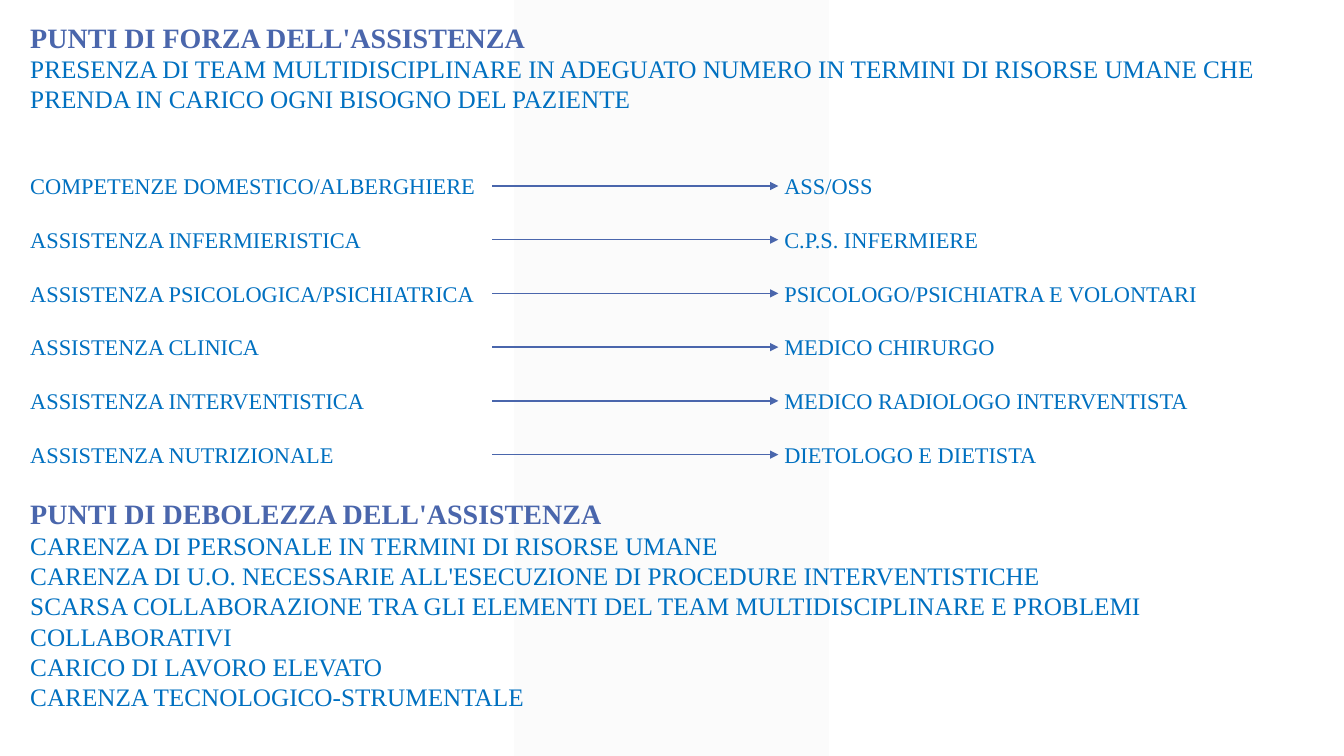
import dataclasses

import lxml.etree
import pptx
import pptx.dml.color
import pptx.enum.shapes
import pptx.enum.text
import pptx.oxml
import pptx.oxml.ns
import pptx.util

SLIDE_WIDTH = 13.33
SLIDE_HEIGHT = 7.5
CELL = 0.1  # side of a grid cell in inches; places below count cells
LEFT_MARGIN = 3
TEXT_WIDTH = 127.9
ARROW_START = 48.8
ARROW_END = 77.2
FIRST_ROW = 17.1
ROW_PITCH = 5.33
ROW_HEIGHT = 2.7
FONT = "Times New Roman"
INDIGO = "4A66AC"
BLUE = "0070C0"


@dataclasses.dataclass
class Area:
    column: float
    row: float
    columns: float
    rows: float


@dataclasses.dataclass
class CareRole:
    need: str
    professional: str


HEADING = "PUNTI DI FORZA DELL'ASSISTENZA"
STRENGTH = (
    "PRESENZA DI TEAM MULTIDISCIPLINARE IN ADEGUATO NUMERO IN TERMINI DI "
    "RISORSE UMANE CHE PRENDA IN CARICO OGNI BISOGNO DEL PAZIENTE"
)
CARE_ROLES = [
    CareRole("COMPETENZE DOMESTICO/ALBERGHIERE", "ASS/OSS"),
    CareRole("ASSISTENZA INFERMIERISTICA", "C.P.S. INFERMIERE"),
    CareRole("ASSISTENZA PSICOLOGICA/PSICHIATRICA", "PSICOLOGO/PSICHIATRA E VOLONTARI"),
    CareRole("ASSISTENZA CLINICA", "MEDICO CHIRURGO"),
    CareRole("ASSISTENZA INTERVENTISTICA", "MEDICO RADIOLOGO INTERVENTISTA"),
    CareRole("ASSISTENZA NUTRIZIONALE", "DIETOLOGO E DIETISTA"),
]
WEAKNESS_HEADING = "PUNTI DI DEBOLEZZA DELL'ASSISTENZA"
WEAKNESSES = [
    "CARENZA DI PERSONALE IN TERMINI DI RISORSE UMANE",
    "CARENZA DI U.O. NECESSARIE ALL'ESECUZIONE DI PROCEDURE INTERVENTISTICHE",
    "SCARSA COLLABORAZIONE TRA GLI ELEMENTI DEL TEAM MULTIDISCIPLINARE E PROBLEMI COLLABORATIVI",
    "CARICO DI LAVORO ELEVATO",
    "CARENZA TECNOLOGICO-STRUMENTALE",
]


def cells(count: float) -> int:
    return pptx.util.Inches(count * CELL)


def color(value: str) -> pptx.dml.color.RGBColor:
    return pptx.dml.color.RGBColor.from_string(value)


def write(box, lines: list[str], size: float = 18, fill: str = BLUE,
          bold: bool = False, inset: float = 0) -> None:
    """Fill a box with one left-aligned paragraph per line."""
    frame = box.text_frame
    frame.word_wrap = True
    frame.auto_size = pptx.enum.text.MSO_AUTO_SIZE.NONE
    frame.vertical_anchor = pptx.enum.text.MSO_ANCHOR.TOP
    frame.margin_left = cells(inset)
    frame.margin_right = frame.margin_top = frame.margin_bottom = 0
    for index, line in enumerate(lines):
        para = frame.paragraphs[0] if index == 0 else frame.add_paragraph()
        para.alignment = pptx.enum.text.PP_ALIGN.LEFT
        para.line_spacing = pptx.util.Pt(1.2 * size)
        para.space_before = para.space_after = pptx.util.Pt(0)
        span = para.add_run()
        span.text = line
        span.font.name = FONT
        span.font.size = pptx.util.Pt(size)
        span.font.bold = bold
        span.font.color.rgb = color(fill)


def add_text(page, area: Area, lines: list[str], **text_format):
    box = page.shapes.add_textbox(
        cells(area.column), cells(area.row), cells(area.columns), cells(area.rows))
    write(box, lines, **text_format)
    return box


def add_heading(page, area: Area, text: str) -> None:
    title = page.shapes.title
    title.left, title.top = cells(area.column), cells(area.row)
    title.width, title.height = cells(area.columns), cells(area.rows)
    write(title, [text], size=20, fill=INDIGO, bold=True)


def add_band(page) -> None:
    """Draw the pale vertical band behind everything else."""
    band = page.shapes.add_shape(
        pptx.enum.shapes.MSO_SHAPE.RECTANGLE,
        cells(51), 0, cells(31.2), pptx.util.Inches(SLIDE_HEIGHT))
    band.shadow.inherit = False
    band.fill.solid()
    band.fill.fore_color.rgb = color("F2F2F2")
    band.line.fill.background()
    tone = band.element.spPr.find(".//" + pptx.oxml.ns.qn("a:srgbClr"))
    lxml.etree.SubElement(tone, pptx.oxml.ns.qn("a:alpha"), val="30000")
    page.shapes.title.element.addprevious(band.element)


def add_arrow(page, start, end) -> None:
    arrow = page.shapes.add_connector(
        pptx.enum.shapes.MSO_CONNECTOR.STRAIGHT, 0, 0, 0, 0)
    arrow.begin_connect(start, 3)
    arrow.end_connect(end, 1)
    arrow.line.color.rgb = color(INDIGO)
    arrow.line.width = pptx.util.Pt(1)
    outline = arrow.line._get_or_add_ln()
    lxml.etree.SubElement(outline, pptx.oxml.ns.qn("a:tailEnd"), type="triangle")
    lxml.etree.SubElement(arrow.element.spPr, pptx.oxml.ns.qn("a:effectLst"))


def add_care_role(page, role: CareRole, row: float) -> None:
    need = add_text(
        page, Area(LEFT_MARGIN, row, ARROW_START - LEFT_MARGIN, ROW_HEIGHT),
        [role.need], size=16)
    professional = add_text(
        page, Area(ARROW_END, row, 50, ROW_HEIGHT),
        [role.professional], size=16, inset=0.6)
    add_arrow(page, need, professional)


def main() -> None:
    deck = pptx.Presentation()
    deck.slide_width = pptx.util.Inches(SLIDE_WIDTH)
    deck.slide_height = pptx.util.Inches(SLIDE_HEIGHT)
    page = deck.slides.add_slide(deck.slide_layouts.get_by_name("Title Only"))
    add_band(page)
    add_heading(page, Area(LEFT_MARGIN, 2, TEXT_WIDTH, 3.3), HEADING)
    add_text(page, Area(LEFT_MARGIN, 5.3, TEXT_WIDTH, 6), [STRENGTH])
    for index, role in enumerate(CARE_ROLES):
        add_care_role(page, role, FIRST_ROW + index * ROW_PITCH)
    add_text(page, Area(LEFT_MARGIN, 49.3, TEXT_WIDTH, 3.3), [WEAKNESS_HEADING],
             size=20, fill=INDIGO, bold=True)
    add_text(page, Area(LEFT_MARGIN, 52.6, TEXT_WIDTH, 18), WEAKNESSES)
    deck.save("out.pptx")


if __name__ == "__main__":
    main()
